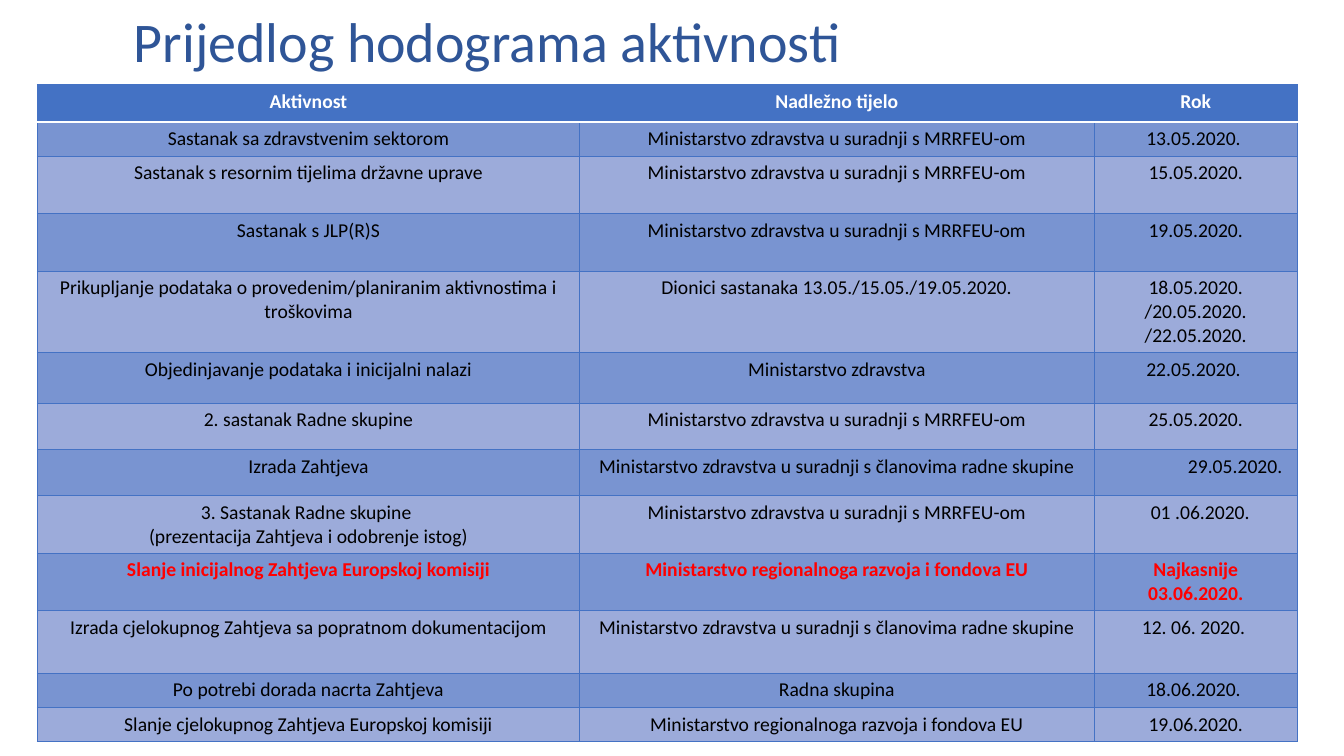
from lxml.etree import SubElement
from pptx import Presentation
from pptx.dml.color import RGBColor
from pptx.enum.text import MSO_ANCHOR, PP_ALIGN
from pptx.oxml.ns import qn
from pptx.util import Inches, Pt

COLORS = {
    "title": "2F5597",
    "header": "4472C4",
    "dark_band": "7994D1",
    "light_band": "9CABDA",
    "white": "FFFFFF",
    "black": "000000",
    "deadline": "FF0000",
}
FONT = "Calibri"
MINISTRY = "Ministarstvo zdravstva"
WITH_FUNDS = f"{MINISTRY} u suradnji s MRRFEU-om"
WITH_GROUP = f"{MINISTRY} u suradnji s članovima radne skupine"
FUNDS = "Ministarstvo regionalnoga razvoja i fondova EU"

COLUMN_WIDTHS = (5.38, 5.1, 2.02)
HEADER_ROW = 0
DRAFT_ROW = 7
APPROVAL_ROW = 8
DEADLINE_ROW = 9
DATE_COLUMN = 2
SCHEDULE = (
    (0.37, "Aktivnost", "Nadležno tijelo", "Rok"),
    (0.34, "Sastanak sa zdravstvenim sektorom", WITH_FUNDS, "13.05.2020. "),
    (0.57, "Sastanak s resornim tijelima državne uprave", WITH_FUNDS, "15.05.2020."),
    (0.57, "Sastanak s JLP(R)S", WITH_FUNDS, "19.05.2020."),
    (0.81, "Prikupljanje podataka o provedenim/planiranim aktivnostima i troškovima",
     "Dionici sastanaka 13.05./15.05./19.05.2020.",
     "18.05.2020. /20.05.2020.\n/22.05.2020."),
    (0.5, "Objedinjavanje podataka i inicijalni nalazi", MINISTRY, "22.05.2020. "),
    (0.46, "2. sastanak Radne skupine", WITH_FUNDS, "25.05.2020."),
    (0.46, "Izrada Zahtjeva", WITH_GROUP, "29.05.2020."),
    (0.57, "3. Sastanak Radne skupine \n(prezentacija Zahtjeva i odobrenje istog)",
     WITH_FUNDS, "01 .06.2020."),
    (0.57, "Slanje inicijalnog Zahtjeva Europskoj komisiji", FUNDS,
     "Najkasnije 03.06.2020."),
    (0.62, "Izrada cjelokupnog Zahtjeva sa popratnom dokumentacijom", WITH_GROUP,
     "12. 06. 2020. "),
    (0.34, "Po potrebi dorada nacrta Zahtjeva", "Radna skupina", "18.06.2020. "),
    (0.34, "Slanje cjelokupnog Zahtjeva Europskoj komisiji", FUNDS, "19.06.2020."),
)


def rgb(name):
    return RGBColor.from_string(COLORS[name])


def add_span(para, text, size, color, bold=False):
    span = para.add_run()
    span.text = text
    span.font.name = FONT
    span.font.size = Pt(size)
    span.font.bold = bold
    span.font.color.rgb = rgb(color)


def add_title(page, text):
    box = page.shapes.add_textbox(Inches(1.23), Inches(-0.12), Inches(10.39), Inches(1.13))
    frame = box.text_frame
    frame.word_wrap = True
    frame.vertical_anchor = MSO_ANCHOR.MIDDLE
    para = frame.paragraphs[0]
    para.line_spacing = 0.9
    add_span(para, text, 40, "title")


def add_border(cell, side, color, width):
    properties = cell._tc.get_or_add_tcPr()
    line = SubElement(properties, qn(f"a:ln{side}"), w=str(Pt(width)))
    fill = SubElement(line, qn("a:solidFill"))
    SubElement(fill, qn("a:srgbClr"), val=COLORS[color])


def style_cell(cell, row):
    white_edge = {HEADER_ROW: "B", HEADER_ROW + 1: "T"}.get(row)
    for side in "LRTB":
        if side == white_edge:
            add_border(cell, side, "white", 1)
        else:
            add_border(cell, side, "header", 0.5)
    band = "dark_band" if row % 2 else "light_band"
    cell.fill.solid()
    cell.fill.fore_color.rgb = rgb("header" if row == HEADER_ROW else band)


def fill_cell(cell, text, row):
    color = {HEADER_ROW: "white", DEADLINE_ROW: "deadline"}.get(row, "black")
    bold = row in (HEADER_ROW, DEADLINE_ROW)
    frame = cell.text_frame
    for index, line in enumerate(text.split("\n")):
        para = frame.add_paragraph() if index else frame.paragraphs[0]
        para.alignment = PP_ALIGN.CENTER
        add_span(para, line, 14, color, bold)


def add_schedule(page):
    height = sum(entry[0] for entry in SCHEDULE)
    table = page.shapes.add_table(
        len(SCHEDULE), len(COLUMN_WIDTHS),
        Inches(0.37), Inches(0.84), Inches(sum(COLUMN_WIDTHS)), Inches(height),
    ).table
    table.horz_banding = False
    for column, width in zip(table.columns, COLUMN_WIDTHS):
        column.width = Inches(width)
    for row, (row_height, *texts) in enumerate(SCHEDULE):
        table.rows[row].height = Inches(row_height)
        for column, text in enumerate(texts):
            cell = table.cell(row, column)
            style_cell(cell, row)
            fill_cell(cell, text, row)
    draft_date = table.cell(DRAFT_ROW, DATE_COLUMN)
    draft_date.margin_right = Inches(0.15)
    draft_date.text_frame.paragraphs[0].alignment = PP_ALIGN.RIGHT
    table.cell(APPROVAL_ROW, DATE_COLUMN).margin_left = Inches(0.19)


def main():
    deck = Presentation()
    deck.slide_width = Inches(13.33)
    deck.slide_height = Inches(7.5)
    page = deck.slides.add_slide(deck.slide_layouts[6])
    add_title(page, "Prijedlog hodograma aktivnosti")
    add_schedule(page)
    deck.save("out.pptx")


if __name__ == "__main__":
    main()
